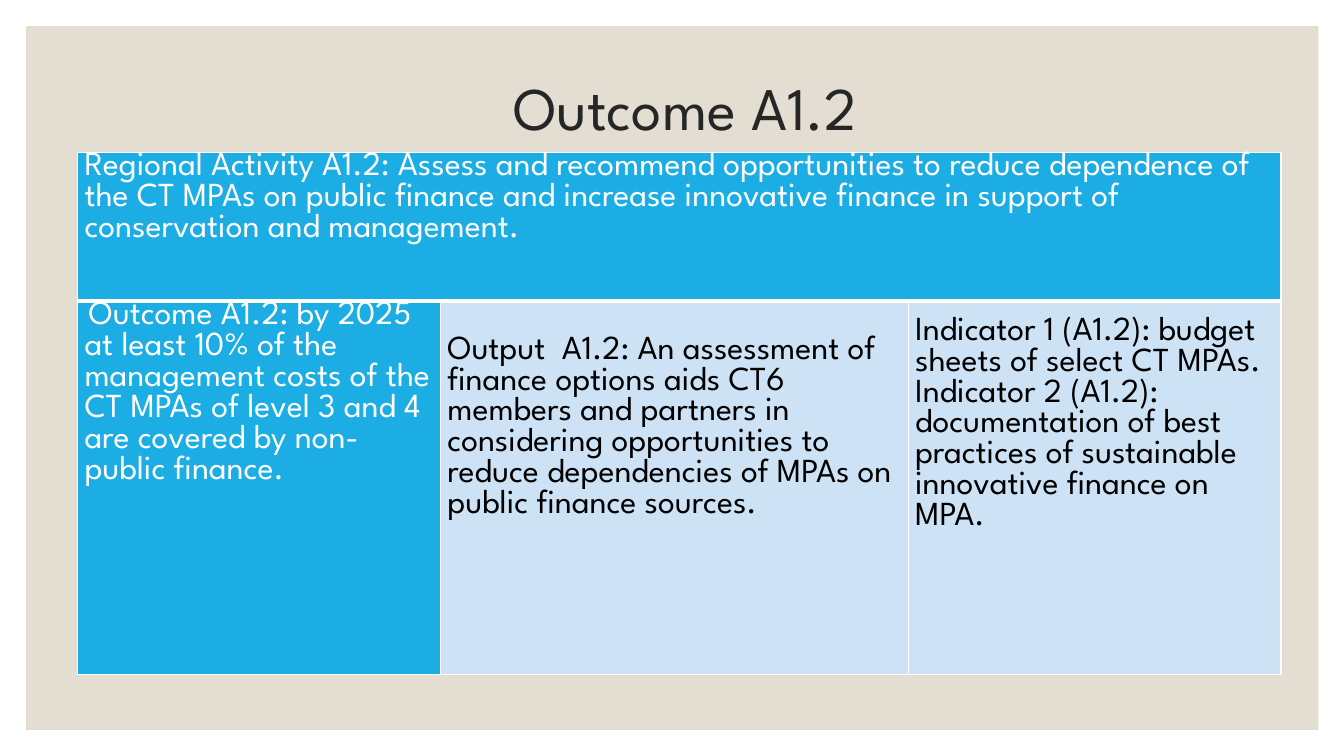
from dataclasses import dataclass

from lxml import etree
from pptx import Presentation
from pptx.dml.color import RGBColor
from pptx.enum import shapes, text
from pptx.oxml import ns
from pptx.util import Pt

FONT = "League Spartan"
COLORS = {
    "panel": "E3DED1",
    "title": "262626",
    "blue": "1CADE4",
    "pale": "CDE3F5",
    "white": "FFFFFF",
    "black": "000000",
}
COLUMN_WIDTHS = (259.2, 334.1, 266.4)
ROW_HEIGHTS = (106.5, 266.4)


@dataclass
class CellText:
    row: int
    col: int
    paragraphs: tuple[str, ...]
    fill: str
    color: str
    top: float = 0
    indent: float = 0


CELLS = (
    CellText(0, 0, (
        "Regional Activity A1.2: Assess and recommend opportunities to reduce "
        "dependence of the CT MPAs on public finance and increase innovative "
        "finance in support of conservation and management.",
    ), "blue", "white"),
    CellText(1, 0, (
        "Outcome A1.2: by 2025 at least 10% of the management costs of the "
        "CT MPAs of level 3 and 4 are covered by non-public finance.",
    ), "blue", "white", indent=3),
    CellText(1, 1, (
        "Output  A1.2: An assessment of finance options aids CT6 members and "
        "partners in considering opportunities to reduce dependencies of MPAs "
        "on public finance sources.",
    ), "pale", "black", top=24.5),
    CellText(1, 2, (
        "Indicator 1 (A1.2): budget sheets of select CT MPAs.",
        "Indicator 2 (A1.2): documentation of best practices of sustainable "
        "innovative finance on MPA.",
    ), "pale", "black", top=11),
)


def rgb(name: str) -> RGBColor:
    return RGBColor.from_string(COLORS[name])


def format_paragraph(p, size: float, color: str) -> None:
    p.font.name = FONT
    p.font.size = Pt(size)
    p.font.bold = False
    p.font.color.rgb = rgb(color)


def add_panel(s) -> None:
    """Place the beige panel behind everything else."""
    sp = s.shapes.add_shape(shapes.MSO_SHAPE.RECTANGLE,
                            Pt(18.7), Pt(18.7), Pt(923), Pt(502.6))
    sp.shadow.inherit = False
    sp.fill.solid()
    sp.fill.fore_color.rgb = rgb("panel")
    sp.line.fill.background()
    s.shapes._spTree.insert(2, sp._element)


def set_title(s, wording: str) -> None:
    sp = s.shapes.title
    sp.left, sp.top, sp.width, sp.height = Pt(84), Pt(50.4), Pt(792), Pt(57.6)
    tf = sp.text_frame
    tf.text = wording
    tf.auto_size = text.MSO_AUTO_SIZE.NONE
    tf.vertical_anchor = text.MSO_ANCHOR.MIDDLE
    tf.margin_left = Pt(26)
    p = tf.paragraphs[0]
    p.alignment = text.PP_ALIGN.CENTER
    p.line_spacing = 0.9
    format_paragraph(p, 43.2, "title")


def set_borders(cell, top: float, bottom: float) -> None:
    tc_pr = cell._tc.get_or_add_tcPr()
    for side, width in (("L", 1), ("R", 1), ("T", top), ("B", bottom)):
        ln = etree.SubElement(tc_pr, ns.qn(f"a:ln{side}"), w=str(Pt(width)))
        fill = etree.SubElement(ln, ns.qn("a:solidFill"))
        etree.SubElement(fill, ns.qn("a:srgbClr"), val=COLORS["white"])


def fill_cell(cell, content: CellText) -> None:
    cell.fill.solid()
    cell.fill.fore_color.rgb = rgb(content.fill)
    cell.margin_left = cell.margin_right = Pt(5)
    cell.margin_top, cell.margin_bottom = Pt(content.top), Pt(0)
    cell.text_frame.text = "\n".join(content.paragraphs)
    for p in cell.text_frame.paragraphs:
        format_paragraph(p, 24, content.color)
        if content.indent:
            p._p.get_or_add_pPr().set("indent", str(Pt(content.indent)))


def add_outcome_table(s) -> None:
    frame = s.shapes.add_table(len(ROW_HEIGHTS), len(COLUMN_WIDTHS),
                               Pt(55.4), Pt(108.7),
                               Pt(sum(COLUMN_WIDTHS)), Pt(sum(ROW_HEIGHTS)))
    table = frame.table
    table.first_row = table.horz_banding = False
    for column, width in zip(table.columns, COLUMN_WIDTHS):
        column.width = Pt(width)
    for i, height in enumerate(ROW_HEIGHTS):
        table.rows[i].height = Pt(height)
        for cell in table.rows[i].cells:
            set_borders(cell, *((1, 3) if i == 0 else (3, 1)))
    table.cell(0, 0).merge(table.cell(0, len(COLUMN_WIDTHS) - 1))
    for content in CELLS:
        fill_cell(table.cell(content.row, content.col), content)


def main() -> None:
    prs = Presentation()
    prs.slide_width, prs.slide_height = Pt(960), Pt(540)
    s = prs.slides.add_slide(prs.slide_layouts[5])
    add_panel(s)
    set_title(s, "Outcome A1.2")
    add_outcome_table(s)
    prs.save("out.pptx")


if __name__ == "__main__":
    main()
